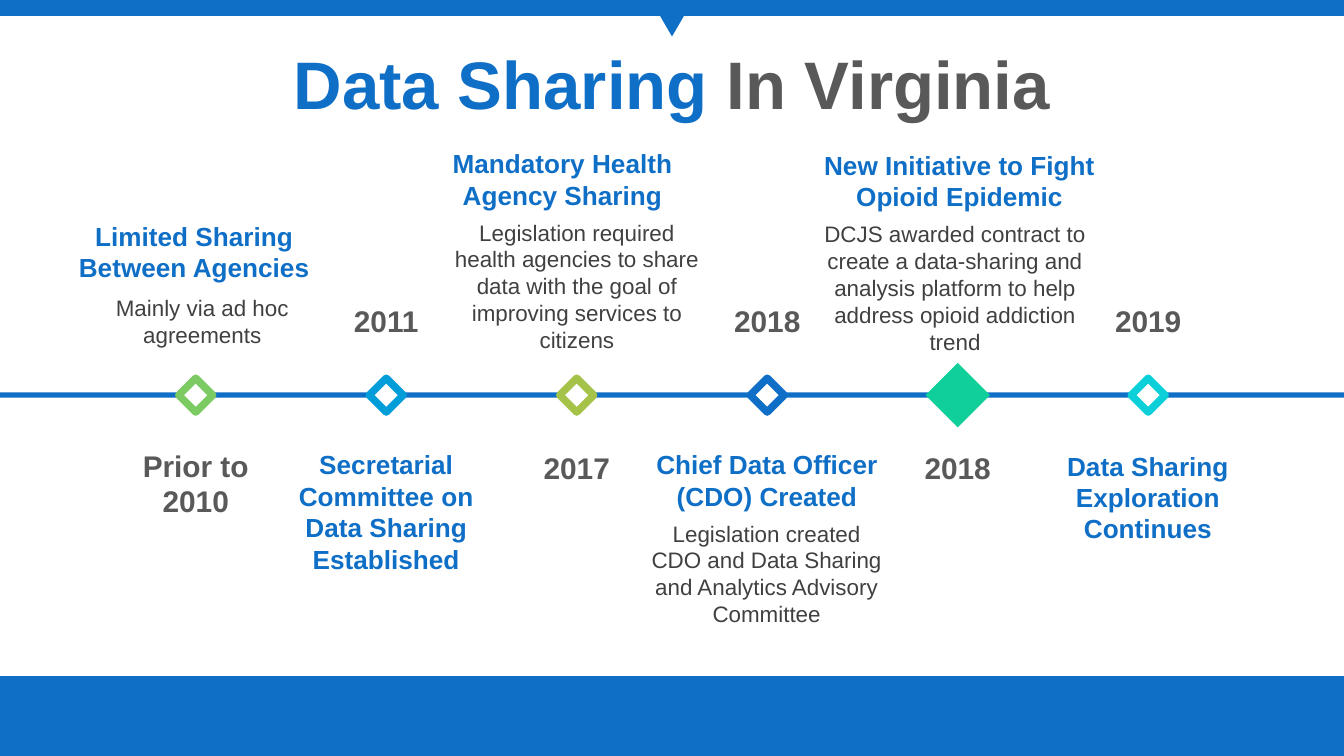
from pptx import Presentation
from pptx.dml.color import RGBColor
from pptx.enum.shapes import MSO_SHAPE
from pptx.enum.text import MSO_ANCHOR, PP_ALIGN
from pptx.util import Cm, Pt

THEME = {
    "blue": "0F6FC6", "white": "FFFFFF", "highlight": "10CF9B",
    "font": "Arial",
    "title": {"size": 36, "bold": True, "color": "0F6FC6"},
    "title_end": {"size": 36, "bold": True, "color": "595959"},
    "year": {"size": 16, "bold": True, "color": "595959"},
    "heading": {"size": 14, "bold": True, "color": "0F6FC6"},
    "body": {"size": 12, "bold": False, "color": "404040"},
}

# All lengths are in centimetres.
PAGE_WIDTH, PAGE_HEIGHT = 25.4, 14.29
AXIS_Y, FIRST_X, STEP_X = 7.47, 3.7, 3.6
MARKER, BIG_MARKER, MARKER_LINE = 0.64, 1.22, 4

TITLE = [("Data Sharing ", "title"), ("In Virginia", "title_end")]

# year, marker outline (None: the highlighted marker), label top, label width
MILESTONES = [
    ("Prior to 2010", "7CCA62", 8.33, 2.64),
    ("2011", "009DD9", 5.59, 1.85),
    ("2017", "A5C249", 8.38, 1.85),
    ("2018", "0F6FC6", 5.59, 1.85),
    ("2018", None, 8.38, 1.85),
    ("2019", "0BD0D9", 5.59, 1.85),
]

# style, left, top, width, height, paragraphs (\v breaks a line)
CAPTIONS = [
    ("heading", 1.22, 4.04, 4.9, 1.45, ["Limited Sharing", "Between Agencies"]),
    ("body", 1.6, 5.44, 4.45, 1.27, ["Mainly via ad hoc agreements"]),
    ("heading", 4.7, 8.36, 5.2, 2.64,
     ["Secretarial Committee on\vData Sharing Established"]),
    ("heading", 19.51, 8.38, 4.37, 2.06, ["Data Sharing Exploration Continues"]),
    ("heading", 8.18, 2.67, 4.9, 2.06, ["Mandatory Health Agency Sharing"]),
    ("body", 8.2, 4.01, 5.41, 2.82,
     ["Legislation required\vhealth agencies to share data with the goal of "
      "improving services to citizens"]),
    ("heading", 15.24, 2.69, 5.79, 1.45,
     ["New Initiative to Fight Opioid Epidemic"]),
    ("body", 15.19, 4.04, 5.72, 2.82,
     ["DCJS awarded contract to create a data-sharing and analysis platform "
      "to help address opioid addiction trend"]),
    ("heading", 12.07, 8.36, 4.85, 2.06, ["Chief Data Officer (CDO) Created"]),
    ("body", 12.04, 9.7, 4.9, 2.82,
     ["Legislation created CDO and Data Sharing and Analytics Advisory "
      "Committee"]),
]


def add_figure(page, kind, left, top, width, height, fill, outline=None):
    shape = page.shapes.add_shape(kind, Cm(left), Cm(top), Cm(width), Cm(height))
    shape.shadow.inherit = False
    shape.fill.solid()
    shape.fill.fore_color.rgb = RGBColor.from_string(fill)
    if outline:
        shape.line.color.rgb = RGBColor.from_string(outline)
        shape.line.width = Pt(MARKER_LINE)
    else:
        shape.line.fill.background()
    return shape


def add_text(page, left, top, width, height, paragraphs, anchor=MSO_ANCHOR.TOP):
    """Add centred text; each paragraph is a list of (text, style name)."""
    box = page.shapes.add_textbox(Cm(left), Cm(top), Cm(width), Cm(height))
    frame = box.text_frame
    for name, value in {"word_wrap": True, "vertical_anchor": anchor}.items():
        setattr(frame, name, value)
    for index, spans in enumerate(paragraphs):
        para = frame.add_paragraph() if index else frame.paragraphs[0]
        para.alignment = PP_ALIGN.CENTER
        for text, style_name in spans:
            style = THEME[style_name]
            font_values = {"name": THEME["font"], "size": Pt(style["size"]),
                           "bold": style["bold"]}
            for position, line in enumerate(text.split("\v")):
                if position:
                    para.add_line_break()
                span = para.add_run()
                span.text = line
                for name, value in font_values.items():
                    setattr(span.font, name, value)
                span.font.color.rgb = RGBColor.from_string(style["color"])


def add_frame(page):
    blue = THEME["blue"]
    for top, height in [(12.78, 1.51), (0, 0.3)]:
        add_figure(page, MSO_SHAPE.RECTANGLE, 0, top, PAGE_WIDTH, height, blue)
    pointer = add_figure(page, MSO_SHAPE.ISOSCELES_TRIANGLE,
                         12.3, 0, 0.8, 0.69, blue)
    pointer.rotation = 180
    add_text(page, 0, 0.33, PAGE_WIDTH, 2.46, [TITLE], MSO_ANCHOR.MIDDLE)


def add_timeline(page):
    add_figure(page, MSO_SHAPE.RECTANGLE, 0, AXIS_Y - 0.05, PAGE_WIDTH, 0.1,
               THEME["blue"])
    for index, (year, outline, top, width) in enumerate(MILESTONES):
        center = FIRST_X + index * STEP_X
        size = MARKER if outline else BIG_MARKER
        fill = THEME["white"] if outline else THEME["highlight"]
        add_figure(page, MSO_SHAPE.DIAMOND, center - size / 2,
                   AXIS_Y - size / 2, size, size, fill, outline)
        height = 1.63 if " " in year else 0.94
        add_text(page, center - width / 2, top, width, height, [[(year, "year")]])


def main():
    deck = Presentation()
    deck.slide_width, deck.slide_height = Cm(PAGE_WIDTH), Cm(PAGE_HEIGHT)
    page = deck.slides.add_slide(deck.slide_layouts[6])
    add_frame(page)
    add_timeline(page)
    for style, left, top, width, height, lines in CAPTIONS:
        add_text(page, left, top, width, height,
                 [[(line, style)] for line in lines])
    deck.save("out.pptx")


if __name__ == "__main__":
    main()
